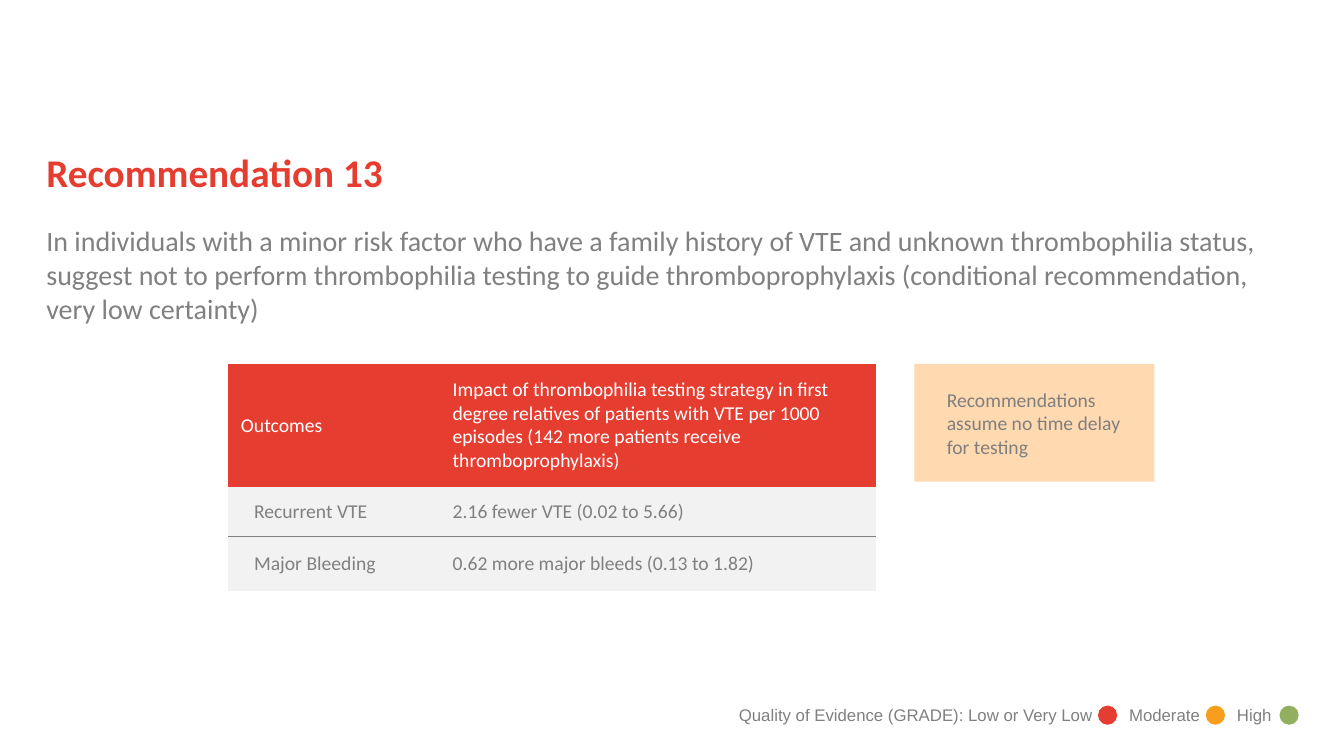
from lxml.etree import SubElement
from pptx import Presentation
from pptx.dml.color import RGBColor
from pptx.enum.shapes import MSO_SHAPE as SHAPE
from pptx.enum.text import MSO_ANCHOR as ANCHOR, PP_ALIGN as ALIGN
from pptx.oxml import parse_xml
from pptx.oxml.ns import nsdecls, qn
from pptx.util import Pt

PX = 9144  # EMU, 100 px to the inch
RED, GREY, WHITE, PALE, PEACH = "E53E31", "808080", "FFFFFF", "F2F2F2", "FFD9B0"
NO_GRID = "{2D5ABB26-0587-4C30-8999-92F81FD0307C}"

OUTCOMES = [
    ("Outcomes",
     "Impact of thrombophilia testing strategy in first degree relatives of patients "
     "with VTE per 1000 episodes (142 more patients receive thromboprophylaxis)"),
    ("Recurrent VTE", "2.16 fewer VTE (0.02 to 5.66)"),
    ("Major Bleeding", "0.62 more major bleeds (0.13 to 1.82)"),
]


def px(*lengths):
    return [n * PX for n in lengths]


def color(hex_text):
    return RGBColor.from_string(hex_text)


def fill(target, hex_text):
    target.fill.solid()
    target.fill.fore_color.rgb = color(hex_text)


def set_margins(target, *margins):
    (target.margin_left, target.margin_top,
     target.margin_right, target.margin_bottom) = px(*margins)


def write(tf, text, size, hex_text, font="Calibri", bold=False):
    tf.text = text
    p = tf.paragraphs[0]
    p.alignment = ALIGN.LEFT
    for r in p.runs:
        r.font.name, r.font.size, r.font.bold = font, Pt(size), bold
        r.font.color.rgb = color(hex_text)
    return p


def add_shape(s, kind, box, hex_text):
    sp = s.shapes.add_shape(kind, *px(*box))
    sp.shadow.inherit = False
    sp.line.fill.background()
    fill(sp, hex_text)
    return sp


def add_heading(s, x, y, w):
    # Title and the recommendation below it
    title = s.shapes.title
    title.left, title.top, title.width, title.height = px(x, y, w, 78)
    body = s.shapes.add_textbox(*px(x, y + 75, w, 432))
    for sp in (title, body):
        tf = sp.text_frame
        tf.word_wrap = True
        tf.vertical_anchor = ANCHOR.TOP
        set_margins(tf, 0, 0, 0, 0)
    write(title.text_frame, "Recommendation 13", 28, RED, bold=True)
    write(body.text_frame,
          "In individuals with a minor risk factor who have a family history of VTE and "
          "unknown thrombophilia status, suggest not to perform thrombophilia testing to "
          "guide thromboprophylaxis (conditional recommendation, very low certainty)",
          20, GREY)


def add_border(cell, side):
    cell._tc.get_or_add_tcPr().insert(0, parse_xml(
        f'<a:{side} {nsdecls("a")} w="3175"><a:solidFill><a:srgbClr val="{GREY}"/>'
        f'</a:solidFill></a:{side}>'))


def add_outcomes(s, x, y, widths, heights):
    # Outcomes table
    frame = s.shapes.add_table(len(heights), len(widths),
                               *px(x, y, sum(widths), sum(heights)))
    table = frame.table
    table.first_row = table.horz_banding = False
    table._tbl.tblPr.find(qn("a:tableStyleId")).text = NO_GRID
    for column, width in zip(table.columns, px(*widths)):
        column.width = width
    for row, height in zip(table.rows, px(*heights)):
        row.height = height
    for i, texts in enumerate(OUTCOMES):
        for j, text in enumerate(texts):
            cell = table.cell(i, j)
            cell.vertical_anchor = ANCHOR.MIDDLE
            set_margins(cell, 26 if i and j == 0 else 13, 13, 13, 13)
            fill(cell, PALE if i else RED)
            write(cell.text_frame, text, 14, GREY if i else WHITE)
            if i:
                add_border(cell, "lnB" if i == 1 else "lnT")


def add_note(s, x, y, w, h):
    # Assumption beside the table
    tf = add_shape(s, SHAPE.RECTANGLE, (x, y, w, h), PEACH).text_frame
    tf.word_wrap = True
    tf.vertical_anchor = ANCHOR.MIDDLE
    set_margins(tf, 32, 5, 10, 5)
    write(tf, "Recommendations assume no time delay for testing", 14, "7F7F7F")


def add_legend(s, x, y, w, h):
    # Evidence grades: tabbed labels, each followed by a dot
    tf = s.shapes.add_textbox(*px(x, y, w, h)).text_frame
    tf.word_wrap = True
    p = write(tf, "Quality of Evidence (GRADE): Low or Very Low\tModerate\tHigh",
              12, GREY, "Arial")
    tabs = SubElement(p._p.get_or_add_pPr(), qn("a:tabLst"))
    for stop in px(387, 494):
        SubElement(tabs, qn("a:tab"), pos=str(stop), algn="l")
    for dx, hex_text in ((366, "E43E32"), (473, "F99D1C"), (546, "91AF5F")):
        add_shape(s, SHAPE.OVAL, (x + dx, y + 6, 19, 19), hex_text)


def main():
    prs = Presentation()
    prs.slide_width, prs.slide_height = px(1333, 750)
    s = prs.slides.add_slide(prs.slide_layouts[5])
    add_heading(s, 46, 147, 1200)
    add_outcomes(s, 226, 361, (210, 433), (122, 48, 54))
    add_note(s, 907, 361, 238, 117)
    add_legend(s, 723, 694, 593, 30)
    prs.save("out.pptx")


if __name__ == "__main__":
    main()
